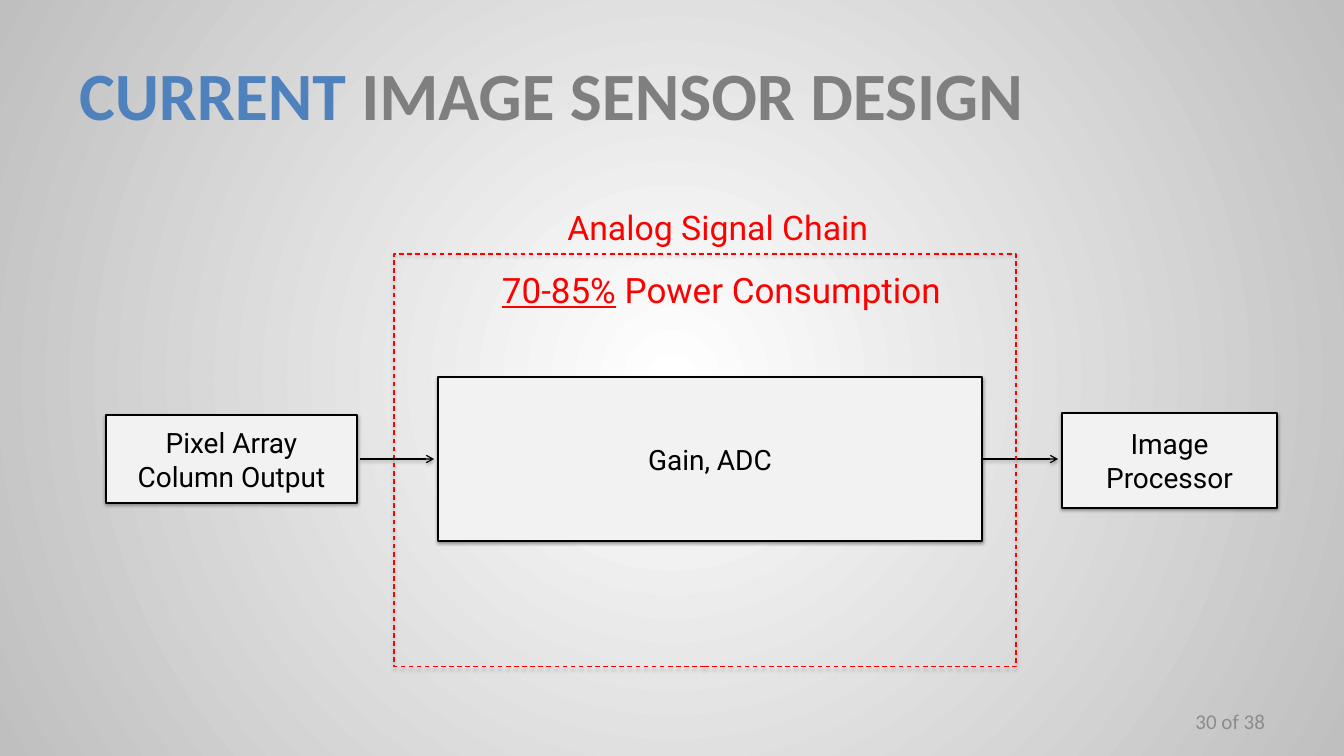
"""Build the slide on current image sensor design."""
from dataclasses import dataclass

from lxml import etree
from pptx import Presentation
from pptx.dml.color import RGBColor
from pptx.enum.dml import MSO_LINE
from pptx.enum.shapes import MSO_CONNECTOR, MSO_SHAPE
from pptx.enum.text import MSO_ANCHOR, MSO_AUTO_SIZE, PP_ALIGN
from pptx.oxml import parse_xml
from pptx.oxml.ns import nsdecls, qn
from pptx.util import Pt

LEFT, CENTER, RIGHT = PP_ALIGN.LEFT, PP_ALIGN.CENTER, PP_ALIGN.RIGHT
TOP, MIDDLE = MSO_ANCHOR.TOP, MSO_ANCHOR.MIDDLE
RECT, STRAIGHT = MSO_SHAPE.RECTANGLE, MSO_CONNECTOR.STRAIGHT
DASH, FIXED = MSO_LINE.DASH, MSO_AUTO_SIZE.NONE
TITLE_ONLY = 5
RIGHT_SIDE = 3
SCALE = 914400 / 84


@dataclass(frozen=True)
class Theme:
    """Colours, fonts and type sizes of the slide."""
    blue: str = "4F81BD"
    gray: str = "7F7F7F"
    pale: str = "F2F2F2"
    black: str = "000000"
    red: str = "FF0000"
    mute: str = "8C8C8C"
    glow: str = "FFFFFF"
    edge: str = "BFBFBF"
    head: str = "Calibri"
    body: str = "Roboto"
    title: int = 58
    power: int = 30
    chain: int = 29
    block: int = 24
    page: int = 18


THEME = Theme()


def px(count):
    """Turn pixels into EMU."""
    return round(count * SCALE)


def color(code):
    """Return a colour from its hex code."""
    return RGBColor.from_string(code)


def write(shape, *lines, size, tint=THEME.black, font=THEME.body, bold=False,
          align=CENTER, anchor=MIDDLE, wrap=True, inset=(8, 4)):
    """Fill a shape with lines, each a list of (text, changes) runs."""
    frame = shape.text_frame
    frame.auto_size = FIXED
    frame.word_wrap = wrap
    frame.vertical_anchor = anchor
    frame.margin_left = frame.margin_right = px(inset[0])
    frame.margin_top = frame.margin_bottom = px(inset[1])
    for index, line in enumerate(lines):
        para = frame.add_paragraph() if index else frame.paragraphs[0]
        para.alignment = align
        for text, change in line:
            run = para.add_run()
            run.text = text
            run.font.name = font
            run.font.size = Pt(size)
            run.font.bold = bold
            run.font.underline = change.get("under", False)
            run.font.color.rgb = color(change.get("tint", tint))


def shade(shape, alpha=38, drop=1.6):
    """Give a shape a soft shadow below it."""
    props = shape._element.spPr
    for old in props.findall(qn("a:effectLst")):
        props.remove(old)
    props.append(parse_xml(
        f'<a:effectLst {nsdecls("a")}><a:outerShdw blurRad="{Pt(3.1)}" '
        f'dist="{Pt(drop)}" dir="5400000" rotWithShape="0">'
        f'<a:srgbClr val="{THEME.black}"><a:alpha val="{alpha * 1000}"/>'
        '</a:srgbClr></a:outerShdw></a:effectLst>'))


def paint(slide):
    """Set a round gradient behind the slide."""
    slide._element.cSld.insert(0, parse_xml(
        f'<p:bg {nsdecls("p", "a")}><p:bgPr><a:gradFill rotWithShape="1">'
        f'<a:gsLst><a:gs pos="0"><a:srgbClr val="{THEME.glow}"/></a:gs>'
        f'<a:gs pos="100000"><a:srgbClr val="{THEME.edge}"/></a:gs></a:gsLst>'
        '<a:path path="circle"><a:fillToRect l="50000" t="50000" r="50000" '
        'b="50000"/></a:path></a:gradFill><a:effectLst/></p:bgPr></p:bg>'))


def head(slide, box, *runs):
    """Place and fill the title."""
    title = slide.shapes.title
    title.left, title.top, title.width, title.height = map(px, box)
    write(title, runs, size=THEME.title, font=THEME.head, bold=True,
          align=LEFT, inset=(12, 6))


def block(slide, box, *lines):
    """Add a labelled block and return it."""
    shape = slide.shapes.add_shape(RECT, *map(px, box))
    shape.fill.solid()
    shape.fill.fore_color.rgb = color(THEME.pale)
    shape.line.color.rgb = color(THEME.black)
    shape.line.width = Pt(1)
    shade(shape)
    write(shape, *([(line, {})] for line in lines), size=THEME.block)
    return shape


def frame(slide, box):
    """Add the dashed outline."""
    shape = slide.shapes.add_shape(RECT, *map(px, box))
    shape.fill.background()
    shape.line.color.rgb = color(THEME.red)
    shape.line.width = Pt(1)
    shape.line.dash_style = DASH
    shade(shape, alpha=35, drop=1.8)


def arrow(slide, start, end, level, source=None):
    """Add a level arrow, joined to the source's right side if given."""
    line = slide.shapes.add_connector(
        STRAIGHT, px(start), px(level), px(end), px(level))
    if source:
        line.begin_connect(source, RIGHT_SIDE)
    line.line.color.rgb = color(THEME.black)
    line.line.width = Pt(1)
    etree.SubElement(line.line._get_or_add_ln(), qn("a:tailEnd"), type="arrow")
    shade(line)


def label(slide, box, *runs, **style):
    """Add a text box of one line."""
    write(slide.shapes.add_textbox(*map(px, box)), runs, **style)


def main():
    """Build and save the slide."""
    deck = Presentation()
    deck.slide_width, deck.slide_height = px(1344), px(756)
    slide = deck.slides.add_slide(deck.slide_layouts[TITLE_ONLY])
    paint(slide)
    head(slide, (67, 30, 1210, 126), ("CURRENT ", {"tint": THEME.blue}),
         ("IMAGE SENSOR DESIGN", {"tint": THEME.gray}))
    block(slide, (1062, 413, 215, 95), "Image Processor")
    block(slide, (106, 415, 251, 88), "Pixel Array", "Column Output")
    gain = block(slide, (438, 377, 544, 164), "Gain, ADC")
    arrow(slide, 982, 1058, 459, gain)
    label(slide, (485, 203, 466, 50), ("Analog Signal Chain", {}),
          size=THEME.chain, tint=THEME.red, anchor=TOP)
    frame(slide, (394, 254, 622, 413))
    arrow(slide, 360, 434, 459)
    label(slide, (494, 265, 469, 51), ("70-85%", {"under": True}),
          (" Power Consumption", {}), size=THEME.power, tint=THEME.red,
          align=LEFT, anchor=TOP, wrap=False)
    label(slide, (963, 701, 314, 40), ("30 of 38", {}), size=THEME.page,
          tint=THEME.mute, font=THEME.head, align=RIGHT, inset=(12, 6))
    deck.save("out.pptx")


if __name__ == "__main__":
    main()
